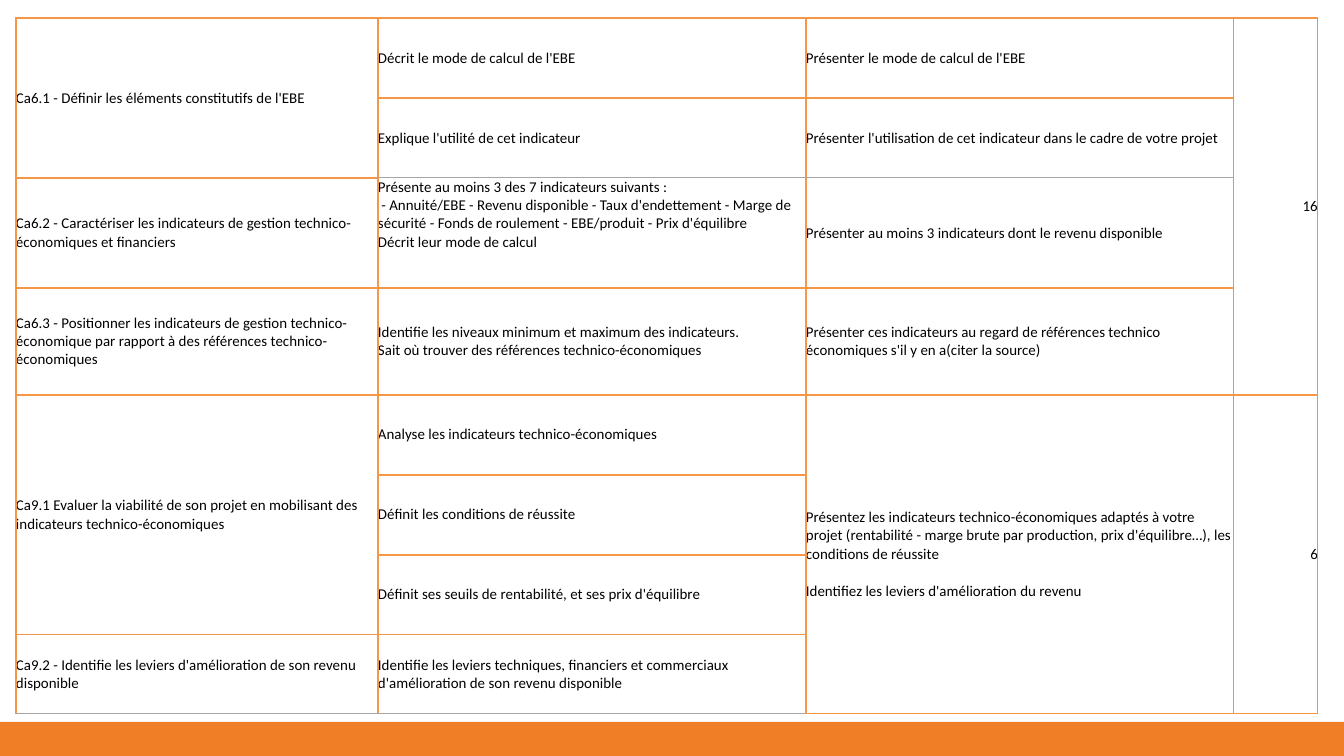
from lxml.etree import SubElement
from pptx import Presentation
from pptx.dml.color import RGBColor
from pptx.enum.shapes import MSO_SHAPE
from pptx.enum.text import MSO_ANCHOR, PP_ALIGN
from pptx.oxml.ns import qn
from pptx.util import Emu, Pt

SCALE = 914400 / 134.4
BLACK = RGBColor(0, 0, 0)
BAND = RGBColor(0xF0, 0x7E, 0x26)
ORANGE = RGBColor(0xF7, 0x96, 0x46)
GREY = RGBColor(0xA6, 0xA6, 0xA6)

COLS = [362, 428, 428, 84]
ROWS = [80, 80, 110, 107, 80, 80, 80, 79]
# Grid lines, counted from the left and the top, that are thin and grey
GREY_X = {3, 4}
GREY_Y = {2, 8}

# (row, column, rows spanned, text)
CELLS = [
    (0, 0, 2, "Ca6.1 - Définir les éléments constitutifs de l'EBE"),
    (2, 0, 1, "Ca6.2 - Caractériser les indicateurs de gestion "
              "technico-économiques et financiers"),
    (3, 0, 1, "Ca6.3 - Positionner les indicateurs de gestion technico-économique "
              "par rapport à des références technico-économiques"),
    (4, 0, 3, "Ca9.1 Evaluer la viabilité de son projet en mobilisant des "
              "indicateurs technico-économiques"),
    (7, 0, 1, "Ca9.2 - Identifie les leviers d'amélioration de son revenu disponible"),
    (0, 1, 1, "Décrit le mode de calcul de l'EBE"),
    (1, 1, 1, "Explique l'utilité de cet indicateur"),
    (2, 1, 1, "Présente au moins 3 des 7 indicateurs suivants :\v"
              " - Annuité/EBE - Revenu disponible - Taux d'endettement - Marge de "
              "sécurité - Fonds de roulement - EBE/produit - Prix d'équilibre\v"
              "Décrit leur mode de calcul"),
    (3, 1, 1, "Identifie les niveaux minimum et maximum des indicateurs.\v"
              "Sait où trouver des références technico-économiques"),
    (4, 1, 1, "Analyse les indicateurs technico-économiques"),
    (5, 1, 1, "Définit les conditions de réussite"),
    (6, 1, 1, "Définit ses seuils de rentabilité, et ses prix d'équilibre"),
    (7, 1, 1, "Identifie les leviers techniques, financiers et commerciaux "
              "d'amélioration de son revenu disponible"),
    (0, 2, 1, "Présenter le mode de calcul de l'EBE"),
    (1, 2, 1, "Présenter l'utilisation de cet indicateur dans le cadre de votre projet"),
    (2, 2, 1, "Présenter au moins 3 indicateurs dont le revenu disponible"),
    (3, 2, 1, "Présenter ces indicateurs au regard de références technico "
              "économiques s'il y en a(citer la source)"),
    (4, 2, 4, "Présentez les indicateurs technico-économiques adaptés à votre "
              "projet (rentabilité - marge brute par production, prix "
              "d'équilibre…), les conditions de réussite\n"
              "Identifiez les leviers d'amélioration du revenu"),
    (0, 3, 4, "16"),
    (4, 3, 4, "6"),
]
TOP_CELL = (2, 1)


def px(n):
    return Emu(round(n * SCALE))


def write(frame, text, size=8, font="Calibri", color=BLACK,
          align=PP_ALIGN.LEFT, gap=10):
    """Fill a text frame; gap is the space in points between paragraphs."""
    frame.text = text
    for i, para in enumerate(frame.paragraphs):
        para.alignment = align
        para.space_before = Pt(gap if i else 0)
        for run in para.runs:
            run.font.size = Pt(size)
            run.font.name = font
            run.font.color.rgb = color


def add_edge(cell, tag, grey):
    width, color = (Pt(0.5), GREY) if grey else (Pt(1), ORANGE)
    line = SubElement(cell._tc.get_or_add_tcPr(), qn(tag), w=str(width))
    fill = SubElement(line, qn("a:solidFill"))
    SubElement(fill, qn("a:srgbClr"), val=str(color))


def style_cell(cell, row, col):
    cell.margin_left = cell.margin_right = 0
    cell.margin_top = cell.margin_bottom = 0
    top = (row, col) == TOP_CELL
    cell.vertical_anchor = MSO_ANCHOR.TOP if top else MSO_ANCHOR.MIDDLE
    add_edge(cell, "a:lnL", col in GREY_X)
    add_edge(cell, "a:lnR", col + 1 in GREY_X)
    add_edge(cell, "a:lnT", row in GREY_Y)
    add_edge(cell, "a:lnB", row + 1 in GREY_Y)
    cell.fill.background()


def add_grid(slide, left, top):
    frame = slide.shapes.add_table(len(ROWS), len(COLS), px(left), px(top),
                                   px(sum(COLS)), px(sum(ROWS)))
    table = frame.table
    table.first_row = table.horz_banding = False
    for col, width in zip(table.columns, COLS):
        col.width = px(width)
    for r, height in enumerate(ROWS):
        table.rows[r].height = px(height)
        for c in range(len(COLS)):
            style_cell(table.cell(r, c), r, c)
    for r, c, span, text in CELLS:
        cell = table.cell(r, c)
        if span > 1:
            cell.merge(table.cell(r + span - 1, c))
        align = PP_ALIGN.RIGHT if c == 3 else PP_ALIGN.LEFT
        write(cell.text_frame, text, align=align)


def add_band(slide, left, top, width, height):
    band = slide.shapes.add_shape(MSO_SHAPE.RECTANGLE, px(left), px(top),
                                  px(width), px(height))
    band.shadow.inherit = False
    band.fill.solid()
    band.fill.fore_color.rgb = BAND
    band.line.fill.background()


def main():
    deck = Presentation()
    deck.slide_width, deck.slide_height = px(1344), px(756)
    slide = deck.slides.add_slide(deck.slide_layouts[6])
    add_band(slide, -5, 722, 1349, 35)
    add_grid(slide, 16, 18)
    deck.save("out.pptx")


if __name__ == "__main__":
    main()
